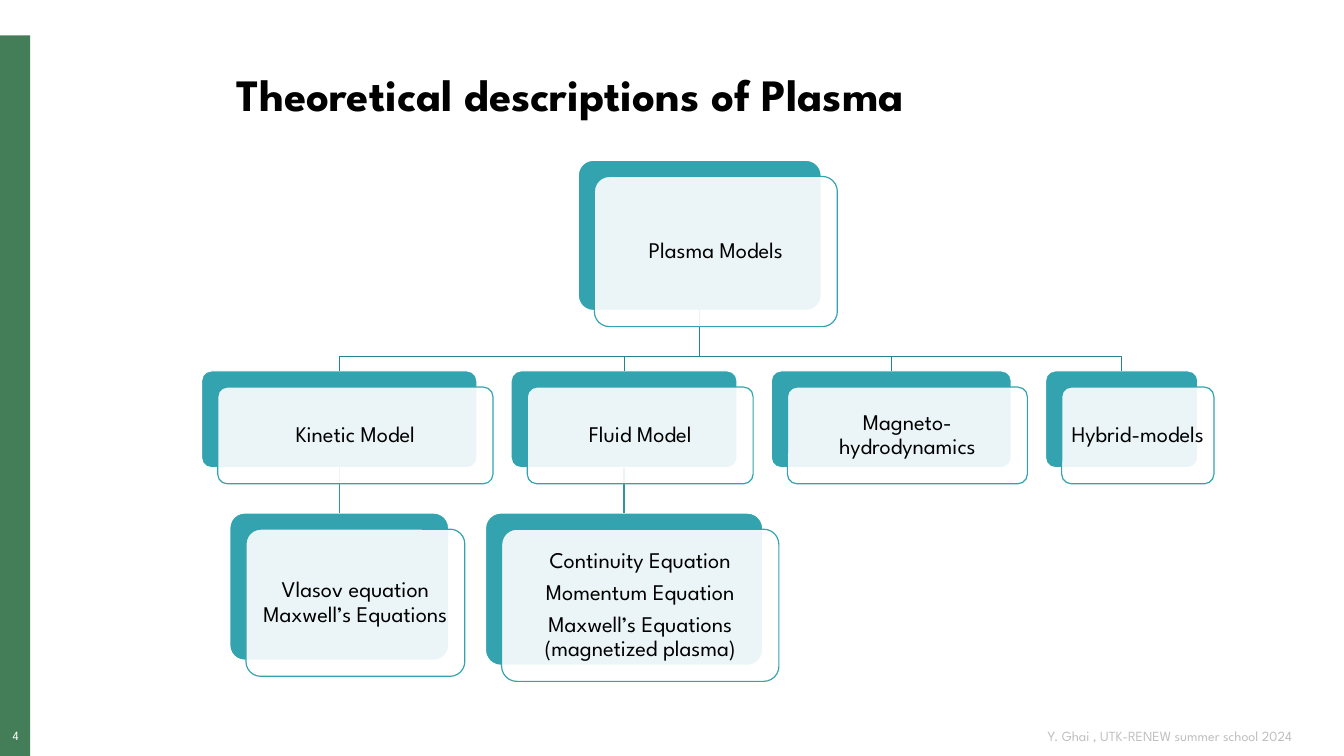
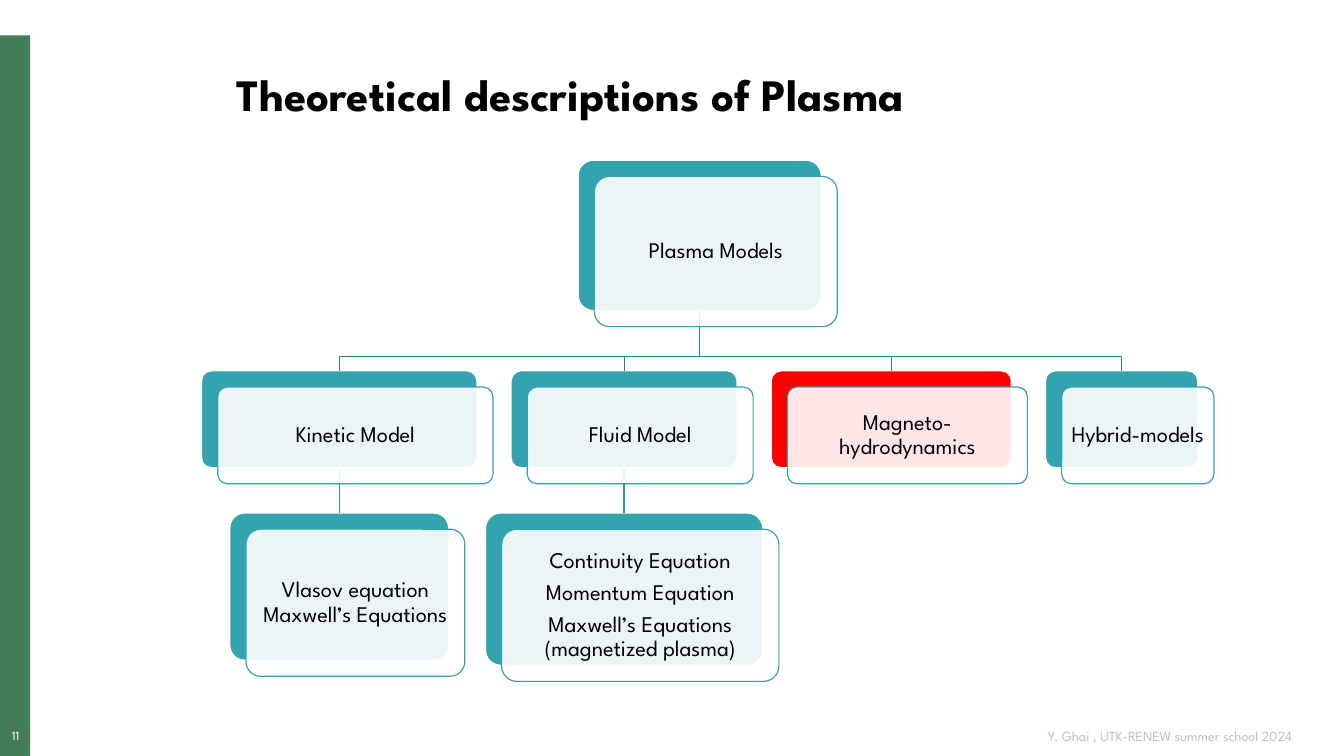
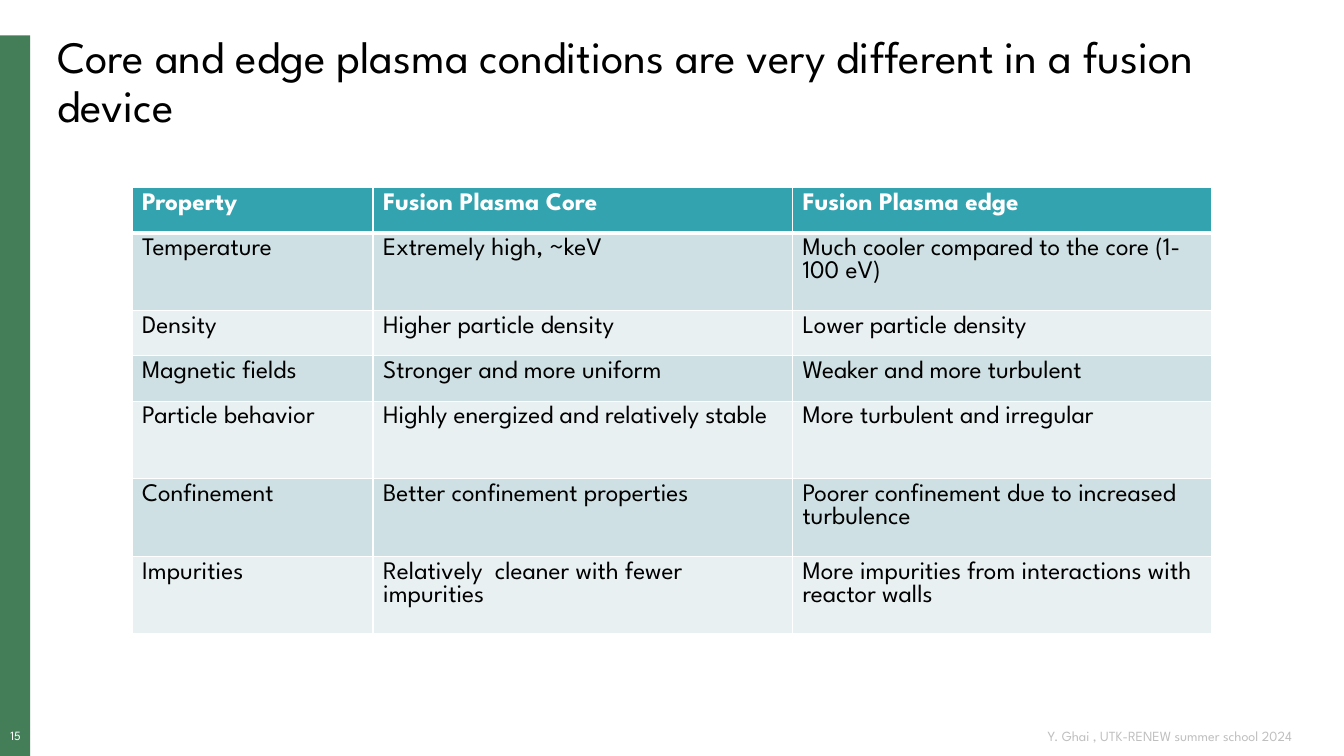
from pptx import Presentation
from pptx.dml.color import RGBColor
from pptx.enum.shapes import MSO_CONNECTOR, MSO_SHAPE
from pptx.enum.text import MSO_ANCHOR, PP_ALIGN
from pptx.oxml.ns import qn
from pptx.util import Inches, Pt
from lxml import etree

RECT, ROUND = MSO_SHAPE.RECTANGLE, MSO_SHAPE.ROUNDED_RECTANGLE
LEFT, MID, RIGHT = PP_ALIGN.LEFT, PP_ALIGN.CENTER, PP_ALIGN.RIGHT
TOP, HALF = MSO_ANCHOR.TOP, MSO_ANCHOR.MIDDLE

# Shared style
FONT = "League Spartan"
WIDE, HIGH = 13.33, 7.5
WHITE, BLACK, GREY = "FFFFFF", "000000", "BFBFBF"
GREEN, TEAL, RED = "447E59", "33A3AF", "FF0000"
ELBOW, STEM = "29838C", "2E949F"
BANDS = ["CEE0E3", "E8F0F2"]
THIN = 0.85
FOOTER = "Y. Ghai , UTK-RENEW summer school 2024"

# Model tree: root, then (name, width, child), child = (lines, width, height)
TITLE = "Theoretical descriptions of Plasma"
ROOT = "Plasma Models"
MHD = "Magneto-hydrodynamics"
MODELS = [
    ("Kinetic Model", 2.73,
     (["Vlasov equation Maxwell’s Equations"], 2.17, 1.46)),
    ("Fluid Model", 2.24,
     (["Continuity Equation", "Momentum Equation",
       "Maxwell’s Equations (magnetized plasma)"], 2.75, 1.51)),
    (MHD, 2.38, None),
    ("Hybrid-models", 1.51, None),
]
START, GAP = 2, 0.34
ROOT_W, ROOT_H, MODEL_H = 2.41, 1.49, 0.96
ROOT_Y, MODEL_Y, CHILD_Y = 1.59, 3.68, 5.09
BEND_Y = 3.54
SHIFT = 0.16

# Core and edge table
CORE_TITLE = ("Core and edge plasma conditions are very different "
              "in a fusion device")
COLS = [2.39, 4.16, 4.16]
LOW, TALL = 0.45, 0.77
ROWS = [
    (LOW, "Property", "Fusion Plasma Core", "Fusion Plasma edge"),
    (TALL, "Temperature", "Extremely high, ~keV",
     "Much cooler compared to the core (1-100 eV)"),
    (LOW, "Density", "Higher particle density", "Lower particle density"),
    (LOW, "Magnetic fields", "Stronger and more uniform",
     "Weaker and more turbulent"),
    (TALL, "Particle behavior", "Highly energized and relatively stable",
     "More turbulent and irregular"),
    (TALL, "Confinement", "Better confinement properties",
     "Poorer confinement due to increased turbulence"),
    (TALL, "Impurities", "Relatively  cleaner with fewer impurities",
     "More impurities from interactions with reactor walls"),
]


def paint(color, code):
    color.rgb = RGBColor.from_string(code)


def fill(part, code):
    part.fill.solid()
    paint(part.fill.fore_color, code)


def write(frame, lines, size, code=BLACK, bold=False, align=LEFT,
          space=None, after=None):
    frame.word_wrap = True
    for i, line in enumerate(lines):
        para = frame.paragraphs[0] if i == 0 else frame.add_paragraph()
        para.alignment = align
        if space:
            para.line_spacing = space
        if after:
            para.space_after = Pt(after)
        run = para.add_run()
        run.text = line
        run.font.name, run.font.size, run.font.bold = FONT, Pt(size), bold
        paint(run.font.color, code)


def inset(frame, pad):
    frame.margin_left = frame.margin_right = pad
    frame.margin_top = frame.margin_bottom = pad


def label(slide, box, text, size, anchor=TOP, pad=None, **style):
    frame = slide.shapes.add_textbox(*map(Inches, box)).text_frame
    frame.vertical_anchor = anchor
    if pad is not None:
        inset(frame, pad)
    write(frame, [text], size, **style)


def block(slide, kind, box, code, edge=None):
    shape = slide.shapes.add_shape(kind, *map(Inches, box))
    shape.shadow.inherit = False
    fill(shape, code)
    if edge:
        shape.adjustments[0] = 0.1
        shape.line.width = Pt(THIN)
        paint(shape.line.color, edge)
    else:
        shape.line.fill.background()
    return shape


def page(deck, number, title, box, bold):
    slide = deck.slides.add_slide(deck.slide_layouts[6])
    block(slide, RECT, (0, 0.35, 0.3, HIGH - 0.35), GREEN)
    label(slide, (0, 7.24, 0.31, 0.17), str(number), 9, pad=0,
          code=WHITE, align=MID, space=0.9)
    label(slide, (8.76, 7.2, 4.15, 0.2), FOOTER, 10, HALF,
          code=GREY, align=RIGHT)
    label(slide, box, title, 32, bold=bold, space=0.9)
    return slide


def front(slide, box, lines):
    x, y, w, h = box
    card = block(slide, ROUND, (x + SHIFT, y + SHIFT, w, h), WHITE, TEAL)
    tint = card.fill._xPr.find(qn("a:solidFill"))[0]
    etree.SubElement(tint, qn("a:alpha"), val="90000")
    card.text_frame.vertical_anchor = HALF
    inset(card.text_frame, Pt(4.8))
    write(card.text_frame, lines, 16, align=MID, space=0.9, after=5.6)


def elbow(slide, x, y, end):
    pen = slide.shapes.build_freeform(Inches(x), Inches(y))
    pen.add_line_segments(
        [(Inches(a), Inches(b))
         for a, b in [(x, BEND_Y), (end, BEND_Y), (end, MODEL_Y)]],
        close=False)
    line = pen.convert_to_shape()
    line.shadow.inherit = False
    line.fill.background()
    line.line.width = Pt(THIN)
    paint(line.line.color, ELBOW)


def stem(slide, top, low):
    line = slide.shapes.add_connector(MSO_CONNECTOR.STRAIGHT, 0, 0, 0, 0)
    line.begin_connect(top, 2)
    line.end_connect(low, 0)
    line.line.width = Pt(THIN)
    paint(line.line.color, STEM)
    etree.SubElement(line._element.spPr, qn("a:effectLst"))


def tree(deck, number, marked=None):
    slide = page(deck, number, TITLE, (2.25, 0.67, 9, 0.83), True)
    cards, links = [], []

    def back(box, lines, code=TEAL):
        cards.append((box, lines))
        return block(slide, ROUND, box, code, WHITE)

    # Back plates
    span = sum(m[1] for m in MODELS) + GAP * (len(MODELS) - 1)
    hub = START + span / 2
    back((hub - ROOT_W / 2, ROOT_Y, ROOT_W, ROOT_H), [ROOT])
    x, mids = START, []
    for name, w, child in MODELS:
        code = RED if name == marked else TEAL
        plate = back((x, MODEL_Y, w, MODEL_H), [name], code)
        mid = x + w / 2
        mids.append(mid)
        if child:
            lines, cw, ch = child
            leaf = back((mid - cw / 2, CHILD_Y, cw, ch), lines)
            links.append((plate, leaf))
        x += w + GAP
    # Links, then front cards over them
    for mid in mids:
        elbow(slide, hub, ROOT_Y + ROOT_H, mid)
    for top, low in links:
        stem(slide, top, low)
    for box, lines in cards:
        front(slide, box, lines)


def border(cell, base):
    props = cell._tc.get_or_add_tcPr()
    for i, side in enumerate(["lnL", "lnR", "lnT", "lnB"]):
        width = base if side == "lnB" else 1
        line = etree.Element(qn("a:" + side), w=str(Pt(width)))
        solid = etree.SubElement(line, qn("a:solidFill"))
        etree.SubElement(solid, qn("a:srgbClr"), val=WHITE)
        props.insert(i, line)


def grid(deck, number):
    slide = page(deck, number, CORE_TITLE, (0.47, 0.3, 12.5, 1.11), False)
    table = slide.shapes.add_table(
        len(ROWS), len(COLS), Inches(1.31), Inches(1.86),
        Inches(sum(COLS)), Inches(sum(r[0] for r in ROWS))).table
    for col, w in zip(table.columns, COLS):
        col.width = Inches(w)
    for r, (h, *texts) in enumerate(ROWS):
        table.rows[r].height = Inches(h)
        head = r == 0
        for c, text in enumerate(texts):
            cell = table.cell(r, c)
            fill(cell, TEAL if head else BANDS[(r - 1) % 2])
            border(cell, 3 if head else 1)
            write(cell.text_frame, [text], 18,
                  WHITE if head else BLACK, head)


def main():
    deck = Presentation()
    deck.slide_width, deck.slide_height = Inches(WIDE), Inches(HIGH)
    tree(deck, 4)
    tree(deck, 11, MHD)
    grid(deck, 15)
    deck.save("out.pptx")


if __name__ == "__main__":
    main()
